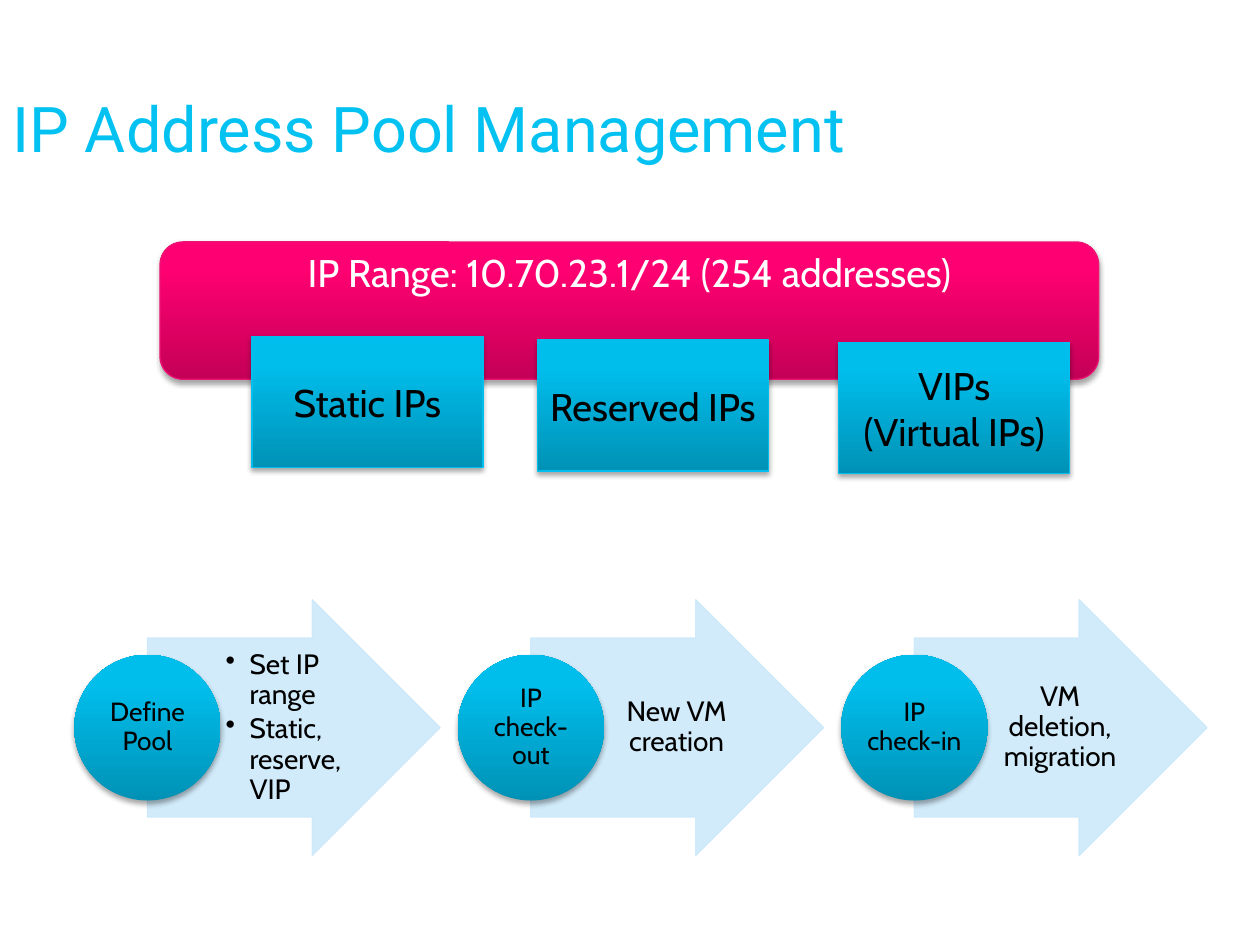
import pptx
import pptx.dml.color
import pptx.enum.shapes
import pptx.enum.text
import pptx.oxml
import pptx.oxml.ns
import pptx.util

SHAPE = pptx.enum.shapes.MSO_SHAPE
ALIGN = pptx.enum.text.PP_ALIGN
ANCHOR = pptx.enum.text.MSO_ANCHOR
NS = pptx.oxml.ns.nsdecls("a")
BLUE = ("0092B6", "00BEEC", "00BFEE")
PINK = ("C40057", "FE0071", "FF0071")
PALE = "CCE9FA"
WIDE_INSET = (0.1, 0.05, 0.1, 0.05)
NOTE_INSET = (0.04, 0.01, 0.02, 0.01)
LABEL_INSET = (0.01,) * 4


def rgb(value):
    """Turn a hex string into a colour."""
    return pptx.dml.color.RGBColor.from_string(value)


def apply(target, values):
    """Set every attribute listed in a dict of format values."""
    for name, value in values.items():
        setattr(target, name, value)


def inner(box, left, top, width, height):
    """Find the box that covers the given shares of an outer box."""
    x, y, w, h = box
    return x + left * w, y + top * h, width * w, height * h


def inches(box):
    """Convert a box to slide lengths."""
    return [pptx.util.Inches(value) for value in box]


def set_text(shape, lines, size, color="000000", inset=WIDE_INSET, anchor=ANCHOR.MIDDLE,
             align=ALIGN.CENTER, font="Cabin", spacing=None, after=0, bullets=False):
    """Fill a shape with formatted paragraphs."""
    frame = shape.text_frame
    apply(frame, {"word_wrap": True, "vertical_anchor": anchor,
                  "auto_size": pptx.enum.text.MSO_AUTO_SIZE.NONE})
    sides = ("margin_left", "margin_top", "margin_right", "margin_bottom")
    apply(frame, dict(zip(sides, inches(inset))))
    for index, line in enumerate(lines):
        para = frame.add_paragraph() if index else frame.paragraphs[0]
        apply(para, {"alignment": align, "line_spacing": spacing,
                     "space_after": pptx.util.Pt(size * after)})
        if bullets:
            properties = para._p.get_or_add_pPr()
            indent = pptx.util.Inches(0.19)
            properties.set("marL", str(indent))
            properties.set("indent", str(-indent))
            properties.append(pptx.oxml.parse_xml(f'<a:buChar {NS} char="•"/>'))
        span = para.add_run()
        span.text = line
        apply(span.font, {"name": font, "size": pptx.util.Pt(size)})
        span.font.color.rgb = rgb(color)


def add_text(page, box, lines, size, **style):
    """Add a text box."""
    set_text(page.shapes.add_textbox(*inches(box)), lines, size, **style)


def add_outline(shape, color):
    """Give a shape a thin line, or none."""
    if color is None:
        shape.line.fill.background()
        return
    shape.line.color.rgb = rgb(color)
    shape.line.width = pptx.util.Pt(0.75)


def add_glossy(page, kind, box, colors, outline=None, rounding=None):
    """Add a shape with a vertical gradient and a soft shadow."""
    shape = page.shapes.add_shape(kind, *inches(box))
    if rounding is not None:
        shape.adjustments[0] = rounding
    shape.fill.gradient()
    shape.fill.gradient_angle = 90
    stops = shape._element.spPr.find(".//" + pptx.oxml.ns.qn("a:gsLst"))
    for stop in list(stops):
        stops.remove(stop)
    for share, color in zip((0, 80, 100), colors):
        stops.append(pptx.oxml.parse_xml(
            f'<a:gs {NS} pos="{share * 1000}"><a:srgbClr val="{color}"/></a:gs>'))
    add_outline(shape, outline)
    shape.shadow.inherit = False
    effects = shape._element.spPr.find(pptx.oxml.ns.qn("a:effectLst"))
    effects.append(pptx.oxml.parse_xml(
        f'<a:outerShdw {NS} blurRad="{pptx.util.Pt(3.1)}" dist="{pptx.util.Pt(1.8)}" '
        'dir="5400000" rotWithShape="0"><a:srgbClr val="000000">'
        '<a:alpha val="35000"/></a:srgbClr></a:outerShdw>'))
    return shape


def add_arrow(page, box):
    """Add a pale, slightly transparent block arrow."""
    arrow = page.shapes.add_shape(SHAPE.RIGHT_ARROW, *inches(box))
    arrow.adjustments[0], arrow.adjustments[1] = 0.7, 0.5
    arrow.fill.solid()
    arrow.fill.fore_color.rgb = rgb(PALE)
    add_outline(arrow, PALE)
    arrow.shadow.inherit = False
    for color in arrow._element.spPr.iter(pptx.oxml.ns.qn("a:srgbClr")):
        color.append(pptx.oxml.parse_xml(f'<a:alpha {NS} val="90000"/>'))


def add_title(page, box, text):
    """Place and format the title placeholder."""
    title = page.shapes.title
    apply(title, dict(zip(("left", "top", "width", "height"), inches(box))))
    set_text(title, [text], 36, "03C2F1", align=ALIGN.LEFT, font="Roboto")


def add_range(page, box):
    """Draw the address range with the kinds of address hanging from it."""
    bar = add_glossy(page, SHAPE.ROUNDED_RECTANGLE, box, PINK, "ED1374")
    set_text(bar, ["IP Range: 10.70.23.1/24 (254 addresses)"], 22, "FFFFFF",
             inset=(0.1, 0, 0.1, 0), anchor=ANCHOR.TOP)
    kinds = [(0.098, 0.69, ["Static IPs"]),
             (0.402, 0.715, ["Reserved IPs"]),
             (0.723, 0.73, ["VIPs", "(Virtual IPs)"])]
    for left, top, lines in kinds:
        place = inner(box, left, top, 0.246, 0.954)
        card = add_glossy(page, SHAPE.ROUNDED_RECTANGLE, place, BLUE, "00BFEF", 0)
        set_text(card, lines, 22)


def add_step(page, box, label, notes):
    """Draw one step: arrow with notes, and a labelled circle at its tail."""
    bullets = len(notes) > 1
    add_arrow(page, inner(box, 0.2, 0, 0.8, 1))
    add_text(page, inner(box, 0.4, 0.15, 0.39, 0.7), notes, 16, inset=NOTE_INSET,
             align=ALIGN.LEFT if bullets else ALIGN.CENTER, spacing=0.9,
             after=0.15 if bullets else 0.35, bullets=bullets)
    circle = inner(box, 0, 0.215, 0.4, 0.57)
    add_glossy(page, SHAPE.OVAL, circle, BLUE)
    add_text(page, inner(circle, 0.145, 0.145, 0.71, 0.71), [label], 15,
             inset=LABEL_INSET, spacing=0.9, after=0.35)


def add_process(page, box):
    """Lay out the steps at an equal pitch across a box."""
    steps = [("Define Pool", ["Set IP range", "Static, reserve, VIP"]),
             ("IP check-out", ["New VM creation"]),
             ("IP check-in", ["VM deletion, migration"])]
    width = 0.323
    pitch = (1 - width) / (len(steps) - 1)
    for index, (label, notes) in enumerate(steps):
        add_step(page, inner(box, index * pitch, 0, width, 1), label, notes)


def main():
    """Build and save the deck."""
    deck = pptx.Presentation()
    apply(deck, {"slide_width": pptx.util.Inches(10), "slide_height": pptx.util.Inches(7.5)})
    page = deck.slides.add_slide(deck.slide_layouts[5])
    whole = (0, 0, 10, 7.5)
    add_title(page, inner(whole, 0, 0.05, 0.9, 0.17), "IP Address Pool Management")
    add_range(page, (1.27, 1.92, 7.45, 1.09))
    add_process(page, (0.59, 4.76, 8.99, 2.03))
    deck.save("out.pptx")


if __name__ == "__main__":
    main()
